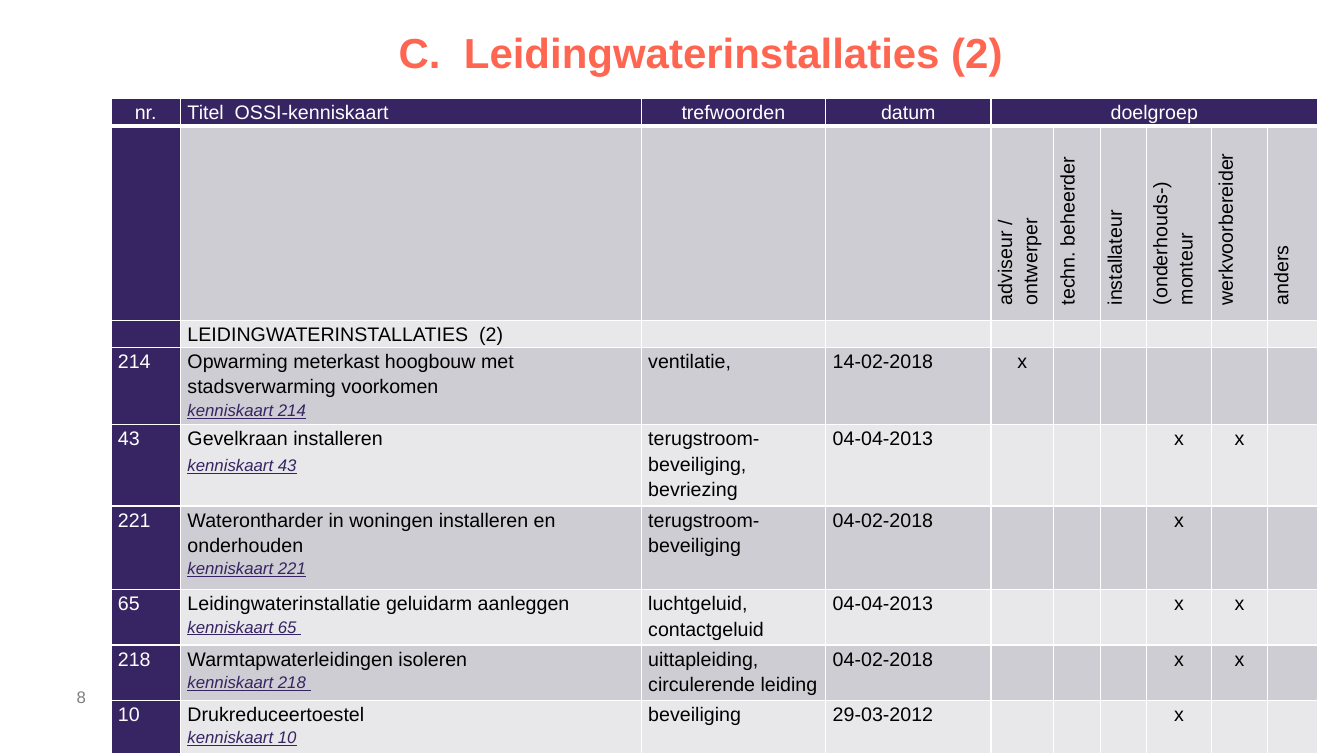
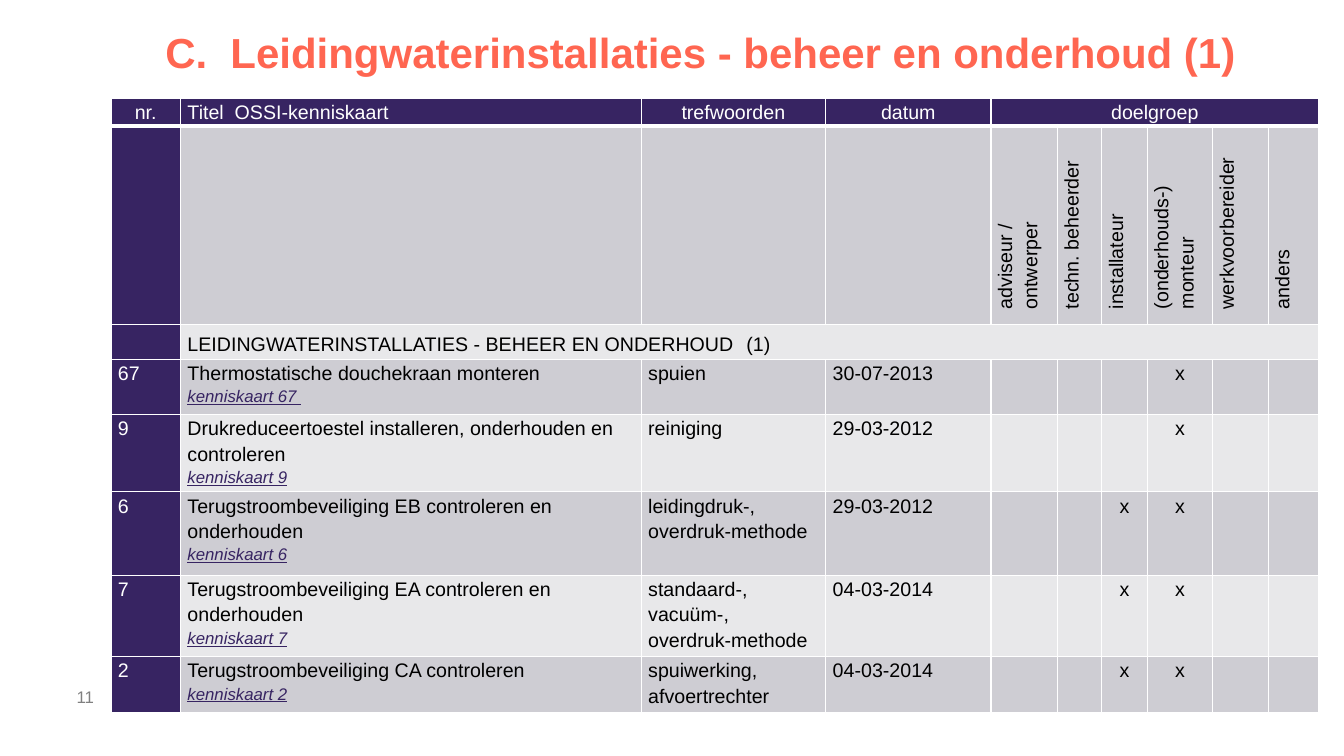
from pptx import Presentation
from pptx.dml.color import RGBColor
from pptx.enum import text as t
from pptx.oxml import parse_xml
from pptx.oxml.ns import nsdecls
from pptx.util import Inches, Pt

FONT = "Arial"
CORAL = RGBColor(0xFF, 0x66, 0x51)
PURPLE = RGBColor(0x37, 0x24, 0x62)
DARK = RGBColor(0xCE, 0xCD, 0xD3)
LIGHT = RGBColor(0xE8, 0xE8, 0xEA)
GREY = RGBColor(0x80, 0x80, 0x80)
WHITE = RGBColor(0xFF, 0xFF, 0xFF)
BLACK = RGBColor(0, 0, 0)
MID = t.PP_ALIGN.CENTER
LEFT = t.PP_ALIGN.LEFT

# Columns and headings shared by both tables
COLS = [0.69, 4.57, 1.83, 1.64]
HEADS = [("nr.", MID), ("Titel  OSSI-kenniskaart", LEFT), ("trefwoorden", MID),
         ("datum", MID), ("doelgroep", MID)]
GROUPS = ["adviseur /\nontwerper", "techn. beheerder", "installateur",
          "(onderhouds-)\nmonteur", "werkvoorbereider", "anders"]

# Underlined run-out after a link: a space, or a tab to a stop (inches, points)
SPACED = ("65", "67", "218")
STOPS = {"43": (1.49, 14), "9": (1.36, 12)}

# Rows: number, title, keywords, date, marked target groups, height
DECK = [
    dict(
        title="C.  Leidingwaterinstallaties (2) ", page="8",
        groups=[0.62, 0.47, 0.45, 0.65, 0.55, 0.5],
        tops=[0.26, 1.93, 0.27], span=False,
        part=[("LEIDINGWATERINSTALLATIES  (2)", 14)],
        rows=[
            ("214", "Opwarming meterkast hoogbouw met stadsverwarming voorkomen",
             "ventilatie,", "14-02-2018", [0], 0.72),
            ("43", "Gevelkraan installeren",
             "terugstroom-beveiliging,\nbevriezing", "04-04-2013", [3, 4], 0.76),
            ("221", "Waterontharder in woningen installeren en onderhouden",
             "terugstroom-beveiliging", "04-02-2018", [3], 0.83),
            ("65", "Leidingwaterinstallatie geluidarm aanleggen",
             "luchtgeluid,\ncontactgeluid", "04-04-2013", [3, 4], 0.55),
            ("218", "Warmtapwaterleidingen isoleren",
             "uittapleiding,\ncirculerende leiding", "04-02-2018", [3, 4], 0.55),
            ("10", "Drukreduceertoestel",
             "beveiliging", "29-03-2012", [3], 0.53),
        ]),
    dict(
        title="C.  Leidingwaterinstallaties - beheer en onderhoud (1) ", page="11",
        groups=[0.66, 0.44, 0.45, 0.65, 0.55, 0.5],
        tops=[0.26, 1.97, 0.33], span=True,
        part=[("LEIDINGWATERINSTALLATIES - BEHEER EN ONDERHOUD", 14),
              (" ", 18), (" (1)", 14)],
        rows=[
            ("67", "Thermostatische douchekraan monteren",
             "spuien", "30-07-2013", [3], 0.55),
            ("9", "Drukreduceertoestel installeren, onderhouden en controleren",
             "reiniging", "29-03-2012", [3], 0.72),
            ("6", "Terugstroombeveiliging EB controleren en onderhouden",
             "leidingdruk-,\noverdruk-methode", "29-03-2012", [2, 3], 0.83),
            ("7", "Terugstroombeveiliging EA controleren en onderhouden",
             "standaard-,\nvacuüm-,\noverdruk-methode", "04-03-2014", [2, 3], 0.76),
            ("2", "Terugstroombeveiliging CA controleren",
             "spuiwerking,\nafvoertrechter", "04-03-2014", [2, 3], 0.55),
        ]),
]


def style(run, size, color, bold=False):
    font = run.font
    font.name, font.size, font.bold = FONT, Pt(size), bold
    font.color.rgb = color


def put(cell, words, color=BLACK, align=LEFT):
    cell.text_frame.text = words
    for para in cell.text_frame.paragraphs:
        para.alignment, para.line_spacing = align, 1.15
        for run in para.runs:
            style(run, 14, color)


deck = Presentation()
deck.slide_width, deck.slide_height = Inches(13.33), Inches(7.5)

for item in DECK:
    slide = deck.slides.add_slide(deck.slide_layouts[6])

    # Page number and title
    for words, at, size, color, bold, align in (
            (item["page"], (0.76, 6.71, 0.71, 0.4), 12, GREY, False, LEFT),
            (item["title"], (1.12, 0.27, 11.78, 0.54), 30, CORAL, True, MID)):
        frame = slide.shapes.add_textbox(*[Inches(n) for n in at]).text_frame
        frame.word_wrap = True
        frame.vertical_anchor = t.MSO_ANCHOR.MIDDLE
        frame.margin_left = frame.margin_right = 0
        frame.margin_top = frame.margin_bottom = 0
        frame.text = words
        para = frame.paragraphs[0]
        para.alignment = align
        if bold:
            para.line_spacing = 0.9
        style(para.runs[0], size, color, bold)

    # Table grid
    wide = COLS + item["groups"]
    high = item["tops"] + [row[-1] for row in item["rows"]]
    table = slide.shapes.add_table(
        len(high), len(wide), Inches(1.1), Inches(0.98),
        Inches(sum(wide)), Inches(sum(high))).table
    for col, size in zip(table.columns, wide):
        col.width = Inches(size)
    for row, size in zip(table.rows, high):
        row.height = Inches(size)

    # Cell borders, fills and margins
    for r in range(len(high)):
        for c in range(len(wide)):
            cell = table.cell(r, c)
            props = cell._tc.get_or_add_tcPr()
            for side in "LRTB":
                width = Pt(3 if r == 0 and side == "B" else 1)
                props.append(parse_xml(
                    f'<a:ln{side} {nsdecls("a")} w="{width}"><a:solidFill>'
                    f'<a:srgbClr val="{WHITE}"/></a:solidFill></a:ln{side}>'))
            cell.fill.solid()
            band = DARK if r % 2 else LIGHT
            cell.fill.fore_color.rgb = PURPLE if r == 0 or c == 0 else band
            cell.margin_left = cell.margin_right = Inches(0.07)
            cell.margin_top = cell.margin_bottom = 0
            end = cell.text_frame.paragraphs[0]._p.get_or_add_endParaRPr()
            end.set("sz", "1400")

    # Header rows
    table.cell(0, 4).merge(table.cell(0, 9))
    for c, (words, align) in enumerate(HEADS):
        put(table.cell(0, c), words, WHITE, align)
    for c, words in enumerate(GROUPS, len(COLS)):
        cell = table.cell(1, c)
        put(cell, words)
        cell._tc.tcPr.set("vert", "vert270")
        for para in cell.text_frame.paragraphs:
            props = para._p.get_or_add_pPr()
            props.set("marL", str(Inches(0.08)))
            props.set("indent", "0")

    # Section row
    if item["span"]:
        table.cell(2, 1).merge(table.cell(2, 9))
    para = table.cell(2, 1).text_frame.paragraphs[0]
    para.line_spacing = 1.15
    for words, size in item["part"]:
        run = para.add_run()
        run.text = words
        style(run, size, BLACK)

    # Card rows
    for r, (num, name, keys, date, marks, _) in enumerate(item["rows"], 3):
        put(table.cell(r, 0), num, WHITE)
        tail = " " if num in SPACED else ""
        put(table.cell(r, 1), f"{name}\nkenniskaart {num}{tail}")
        put(table.cell(r, 2), keys)
        put(table.cell(r, 3), date)
        for mark in marks:
            put(table.cell(r, len(COLS) + mark), "x", align=MID)

        link = table.cell(r, 1).text_frame.paragraphs[1]
        style(link.runs[0], 12, PURPLE)
        if num in STOPS:
            stop, size = STOPS[num]
            link._p.get_or_add_pPr().append(parse_xml(
                f'<a:tabLst {nsdecls("a")}>'
                f'<a:tab pos="{Inches(stop)}" algn="l"/></a:tabLst>'))
            run = link.add_run()
            run.text = "\t"
            style(run, size, PURPLE)
        for run in link.runs:
            run.font.italic = run.font.underline = True

deck.save("out.pptx")
